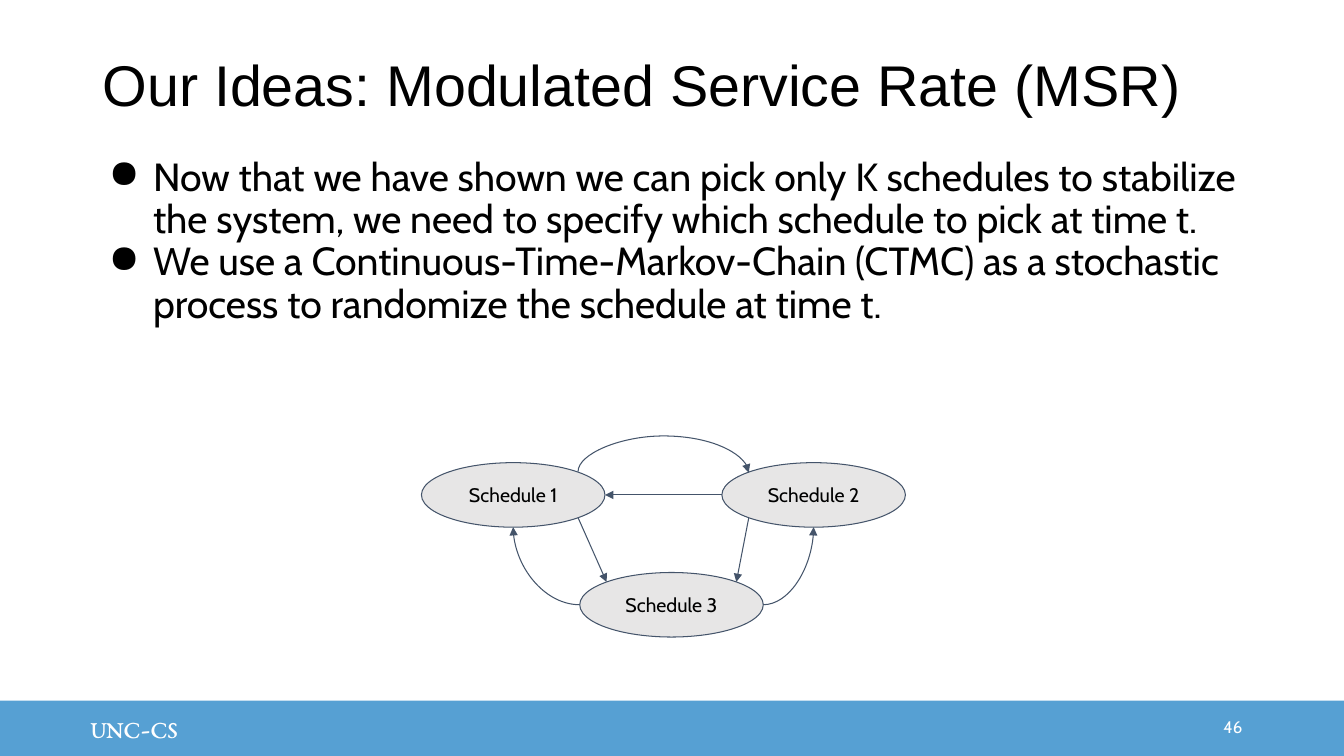
import pptx
import pptx.util
import pptx.dml.color
import pptx.enum.shapes
import pptx.enum.text
import pptx.oxml.ns
from lxml import etree

Inches, Pt = pptx.util.Inches, pptx.util.Pt
RGBColor = pptx.dml.color.RGBColor
SHAPE = pptx.enum.shapes.MSO_SHAPE
CONN = pptx.enum.shapes.MSO_CONNECTOR
ALIGN = pptx.enum.text.PP_ALIGN
ANCHOR = pptx.enum.text.MSO_ANCHOR
qn = pptx.oxml.ns.qn

# Content
TITLE = "Our Ideas: Modulated Service Rate (MSR)"
BULLETS = [
    "Now that we have shown we can pick only K schedules to stabilize "
    "the system, we need to specify which schedule to pick at time t.",
    "We use a Continuous-Time-Markov-Chain (CTMC) as a stochastic "
    "process to randomize the schedule at time t.",
]
FOOTER, PAGE = "UNC-CS", "46"
STATES = {"Schedule 1": (4.18, 4.59), "Schedule 2": (7.16, 4.59),
          "Schedule 3": (5.75, 5.68)}
STATE_W, STATE_H = 1.82, 0.64
# Transitions: from state, side, to state, side, curved
TRANSITIONS = [
    ("Schedule 2", "bottom left", "Schedule 3", "top right", False),
    ("Schedule 2", "left", "Schedule 1", "right", False),
    ("Schedule 3", "right", "Schedule 2", "bottom", True),
    ("Schedule 3", "left", "Schedule 1", "bottom", True),
    ("Schedule 1", "bottom right", "Schedule 3", "top left", False),
]
ARC_RISE = 0.36

BLACK = RGBColor(0x00, 0x00, 0x00)
WHITE = RGBColor(0xFF, 0xFF, 0xFF)
BLUE = RGBColor(0x56, 0xA0, 0xD3)
GREY = RGBColor(0xE7, 0xE6, 0xE6)
SLATE = RGBColor(0x44, 0x54, 0x6A)


def write(sp, *lines, size, font="Cabin", color=BLACK, align=ALIGN.LEFT,
          anchor=ANCHOR.MIDDLE, margins=(0.1, 0.1, 0.1, 0.1), spacing=None,
          bullet=None):
    tf = sp.text_frame
    tf.word_wrap = True
    tf.vertical_anchor = anchor
    (tf.margin_left, tf.margin_top,
     tf.margin_right, tf.margin_bottom) = map(Inches, margins)
    for i, line in enumerate(lines):
        p = tf.paragraphs[0] if i == 0 else tf.add_paragraph()
        p.alignment = align
        if spacing:
            p.line_spacing = spacing
        if bullet:
            pPr = p._p.get_or_add_pPr()
            pPr.set("marL", str(Inches(0.5)))
            pPr.set("indent", str(Inches(-0.44)))
            clr = etree.SubElement(pPr, qn("a:buClr"))
            etree.SubElement(clr, qn("a:srgbClr")).set("val", str(color))
            etree.SubElement(pPr, qn("a:buChar")).set("char", bullet)
        r = p.add_run()
        r.text = line
        r.font.size, r.font.name = Pt(size), font
        r.font.color.rgb = color


def add_box(x, y, w, h):
    return s.shapes.add_textbox(Inches(x), Inches(y), Inches(w), Inches(h))


def add_filled(kind, x, y, w, h, fill, line=None):
    sp = s.shapes.add_shape(kind, Inches(x), Inches(y), Inches(w), Inches(h))
    sp.shadow.inherit = False
    sp.fill.solid()
    sp.fill.fore_color.rgb = fill
    if line:
        sp.line.color.rgb, sp.line.width = line, Pt(0.75)
    else:
        sp.line.fill.background()
    return sp


def add_arrow(kind, start, end):
    c = s.shapes.add_connector(kind, *map(Inches, start + end))
    c.line.color.rgb, c.line.width = SLATE, Pt(0.75)
    etree.SubElement(c.line._get_or_add_ln(), qn("a:tailEnd")).set("type", "triangle")
    etree.SubElement(c._element.spPr, qn("a:effectLst"))
    return c


def site(state, side):
    """Point on a state's ellipse; corners lie on the 45 degree diagonals."""
    dx = ("right" in side) - ("left" in side)
    dy = ("bottom" in side) - ("top" in side)
    k = 0.5 ** 0.5 if dx and dy else 1
    x, y = STATES[state]
    return (x + STATE_W / 2 * (1 + k * dx), y + STATE_H / 2 * (1 + k * dy))


prs = pptx.Presentation()
prs.slide_width, prs.slide_height = Inches(13.33), Inches(7.5)
s = prs.slides.add_slide(prs.slide_layouts[6])

# Footer band
band = add_filled(SHAPE.RECTANGLE, 0, 6.95, 13.33, 0.55, BLUE)
write(band, FOOTER, size=18, font="EB Garamond", color=WHITE,
      margins=(0.9, 0.05, 0.1, 0.05))

# Title, bullets and page number
write(add_box(0.92, 0.15, 11.5, 1.45), TITLE, size=41, font="Arial", spacing=0.9)
write(add_box(0.92, 1.46, 11.5, 2.41), *BULLETS, size=28, anchor=ANCHOR.TOP,
      spacing=0.9, bullet="●")
write(add_box(10.92, 7.01, 1.5, 0.4), PAGE, size=12, color=WHITE,
      align=ALIGN.RIGHT, margins=(0.1, 0.05, 0.1, 0.05))

# States of the chain
for name, (x, y) in STATES.items():
    sp = add_filled(SHAPE.OVAL, x, y, STATE_W, STATE_H, GREY, SLATE)
    write(sp, name, size=14, align=ALIGN.CENTER)

# Transitions
for a, side_a, b, side_b, curved in TRANSITIONS:
    c = add_arrow(CONN.CURVE if curved else CONN.STRAIGHT,
                  site(a, side_a), site(b, side_b))
    if curved:
        c._element.spPr.find(qn("a:prstGeom")).set("prst", "curvedConnector2")

# Arc over the top: an upright curve turned by 270 degrees
x1, y1 = site("Schedule 1", "top right")
x2, _ = site("Schedule 2", "top left")
mid, half, thin = (x1 + x2) / 2, (x2 - x1) / 2, 0.01
arc = add_arrow(CONN.CURVE, (mid + thin / 2, y1 - half), (mid - thin / 2, y1 + half))
spPr = arc._element.spPr
spPr.find(qn("a:xfrm")).set("rot", str(270 * 60000))
guides = spPr.find(qn("a:prstGeom")).find(qn("a:avLst"))
gd = etree.SubElement(guides, qn("a:gd"))
gd.set("name", "adj1")
gd.set("fmla", f"val {round(-ARC_RISE / thin * 100000)}")

prs.save("out.pptx")
